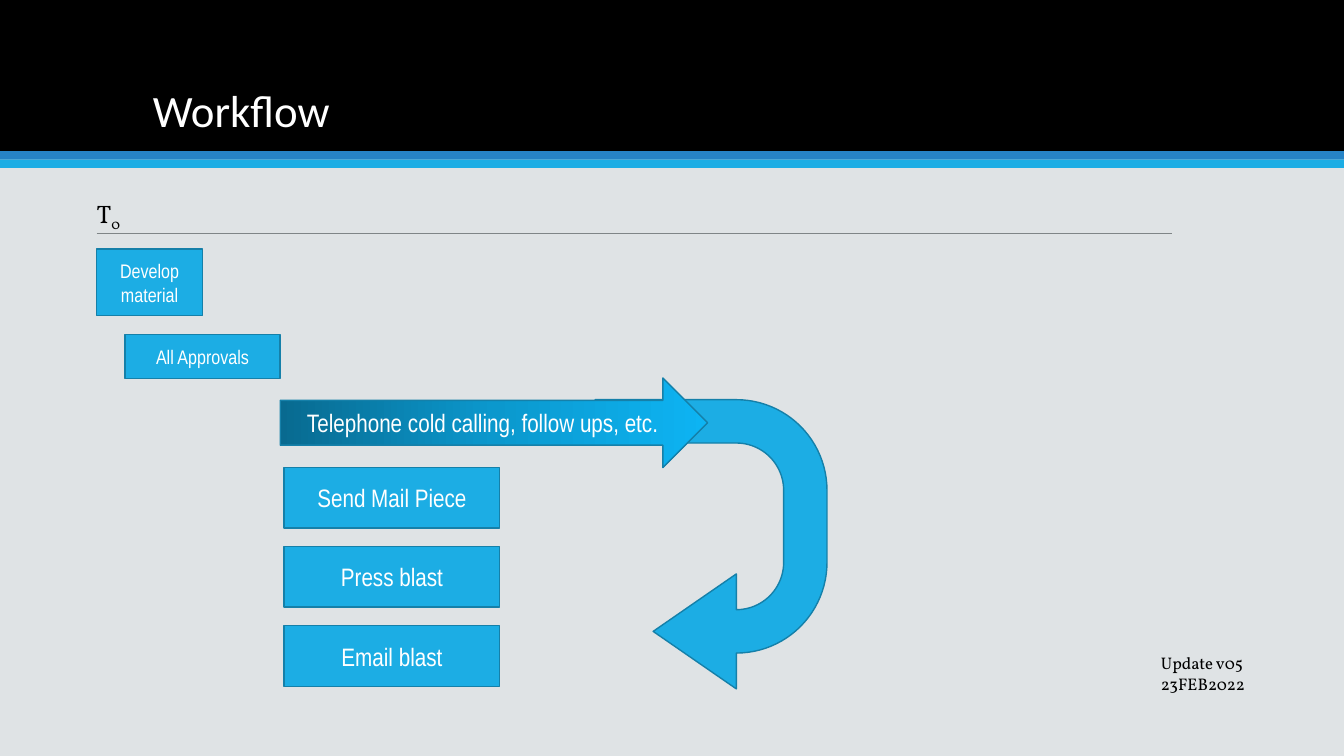
from copy import deepcopy
from dataclasses import dataclass

from lxml.etree import SubElement
from pptx import Presentation
from pptx.dml.color import RGBColor
from pptx.enum.shapes import MSO_CONNECTOR, MSO_SHAPE
from pptx.enum.text import MSO_ANCHOR, MSO_AUTO_SIZE, PP_ALIGN
from pptx.oxml.ns import qn
from pptx.shapes.autoshape import Shape
from pptx.slide import Slide
from pptx.text.text import TextFrame
from pptx.util import Pt

COLORS = {
    "back": "DFE3E5", "black": "000000", "white": "FFFFFF",
    "blue": "2683C6", "cyan": "1CADE4", "edge": "1580A9", "rule": "7F8587",
    "dark": "086A90", "middle": "0B98CD", "bright": "0DB4F3",
}
STEP_FONT = "Arial Narrow"
NOTE_FONT = "Vollkorn"


@dataclass
class Band:
    top: float
    height: float
    color: str


@dataclass
class Step:
    text: str
    left: float
    top: float
    width: float
    height: float
    size: float = 18
    kind: MSO_SHAPE = MSO_SHAPE.RECTANGLE


@dataclass
class Note:
    runs: list[str]
    left: float
    top: float
    width: float
    height: float
    size: float
    wrap: bool


BANDS = [Band(0, 108, "black"), Band(108, 6, "blue"), Band(114, 6, "cyan")]
BLASTS = ["Send Mail Piece", "Press blast", "Email blast"]
STEPS = [
    Step("Develop material", 69, 178, 75.8, 47.5, 14),
    Step("All Approvals", 89.3, 239, 110.9, 31.5, 14),
    *(Step(text, 203, 334 + 56.5 * row, 154, 43.2)
      for row, text in enumerate(BLASTS)),
]
CALLS = Step("Telephone cold calling, follow ups, etc.",
             200.2, 270, 305.3, 64, kind=MSO_SHAPE.RIGHT_ARROW)
TURN = Step("", 404.6, 306, 206.6, 165.6, kind=MSO_SHAPE.U_TURN_ARROW)
NOTES = [
    Note(["T", "0"], 62, 138.2, 31.7, 29, 18, False),
    Note(["Update v05 23FEB2022"], 822.2, 463, 128.9, 36, 12, True),
]


def rgb(name: str) -> RGBColor:
    return RGBColor.from_string(COLORS[name])


def add_run(frame: TextFrame, text: str, font: str, size: float, color: str):
    run = frame.paragraphs[0].add_run()
    run.text = text
    run.font.name = font
    run.font.size = Pt(size)
    run.font.color.rgb = rgb(color)
    return run


def draw_band(slide: Slide, band: Band) -> None:
    shape = slide.shapes.add_shape(
        MSO_SHAPE.RECTANGLE, 0, Pt(band.top), Pt(960), Pt(band.height))
    shape.shadow.inherit = False
    shape.fill.solid()
    shape.fill.fore_color.rgb = rgb(band.color)
    shape.line.fill.background()


def draw_step(slide: Slide, step: Step) -> Shape:
    shape = slide.shapes.add_shape(
        step.kind, Pt(step.left), Pt(step.top), Pt(step.width), Pt(step.height))
    shape.shadow.inherit = False
    shape.fill.solid()
    shape.fill.fore_color.rgb = rgb("cyan")
    shape.line.color.rgb = rgb("edge")
    shape.line.width = Pt(1)
    if step.text:
        frame = shape.text_frame
        frame.word_wrap = True
        frame.vertical_anchor = MSO_ANCHOR.MIDDLE
        frame.paragraphs[0].alignment = PP_ALIGN.CENTER
        add_run(frame, step.text, STEP_FONT, step.size, "white")
    return shape


def shade(shape: Shape) -> None:
    """Give the shape a three-stop gradient from left to right."""
    shape.fill.gradient()
    shape.fill.gradient_angle = 0
    stops = shape.element.spPr.find(qn("a:gradFill")).find(qn("a:gsLst"))
    stops.insert(1, deepcopy(stops[0]))
    names = ["dark", "middle", "bright"]
    for index, (stop, name) in enumerate(zip(shape.fill.gradient_stops, names)):
        stop.position = index / 2
        stop.color.rgb = rgb(name)


def draw_turn(slide: Slide) -> None:
    shape = draw_step(slide, TURN)
    shape.rotation = 90
    for index, value in enumerate([0.187, 0.248, 0.359, 0.438, 0.75]):
        shape.adjustments[index] = value


def draw_rule(slide: Slide) -> None:
    line = slide.shapes.add_connector(
        MSO_CONNECTOR.STRAIGHT, Pt(69), Pt(167), Pt(837.4), Pt(167))
    line.line.color.rgb = rgb("rule")
    line.line.width = Pt(0.5)
    SubElement(line.element.spPr, qn("a:effectLst"))


def draw_note(slide: Slide, note: Note) -> None:
    """Write the first run plainly and any later run as a subscript."""
    frame = slide.shapes.add_textbox(
        Pt(note.left), Pt(note.top), Pt(note.width), Pt(note.height)).text_frame
    frame.word_wrap = note.wrap
    frame.auto_size = MSO_AUTO_SIZE.SHAPE_TO_FIT_TEXT
    for index, text in enumerate(note.runs):
        run = add_run(frame, text, NOTE_FONT, note.size, "black")
        if index:
            run.font._element.set("baseline", "-25000")


def set_title(slide: Slide) -> None:
    title = slide.shapes.title
    title.left, title.top = Pt(102), Pt(20)
    title.width, title.height = Pt(756), Pt(81.5)
    frame = title.text_frame
    frame.word_wrap = True
    frame.auto_size = MSO_AUTO_SIZE.NONE
    frame.vertical_anchor = MSO_ANCHOR.BOTTOM
    frame.paragraphs[0].alignment = PP_ALIGN.LEFT
    frame.paragraphs[0].line_spacing = 0.9
    add_run(frame, "Workflow", "Calibri", 32, "white")
    title.element.getparent().append(title.element)


def main() -> None:
    deck = Presentation()
    deck.slide_width, deck.slide_height = Pt(960), Pt(540)
    slide = deck.slides.add_slide(deck.slide_layouts[5])
    slide.background.fill.solid()
    slide.background.fill.fore_color.rgb = rgb("back")
    for band in BANDS:
        draw_band(slide, band)
    set_title(slide)
    draw_turn(slide)
    draw_rule(slide)
    for step in STEPS:
        draw_step(slide, step)
    for note in NOTES:
        draw_note(slide, note)
    shade(draw_step(slide, CALLS))
    deck.save("out.pptx")


if __name__ == "__main__":
    main()
